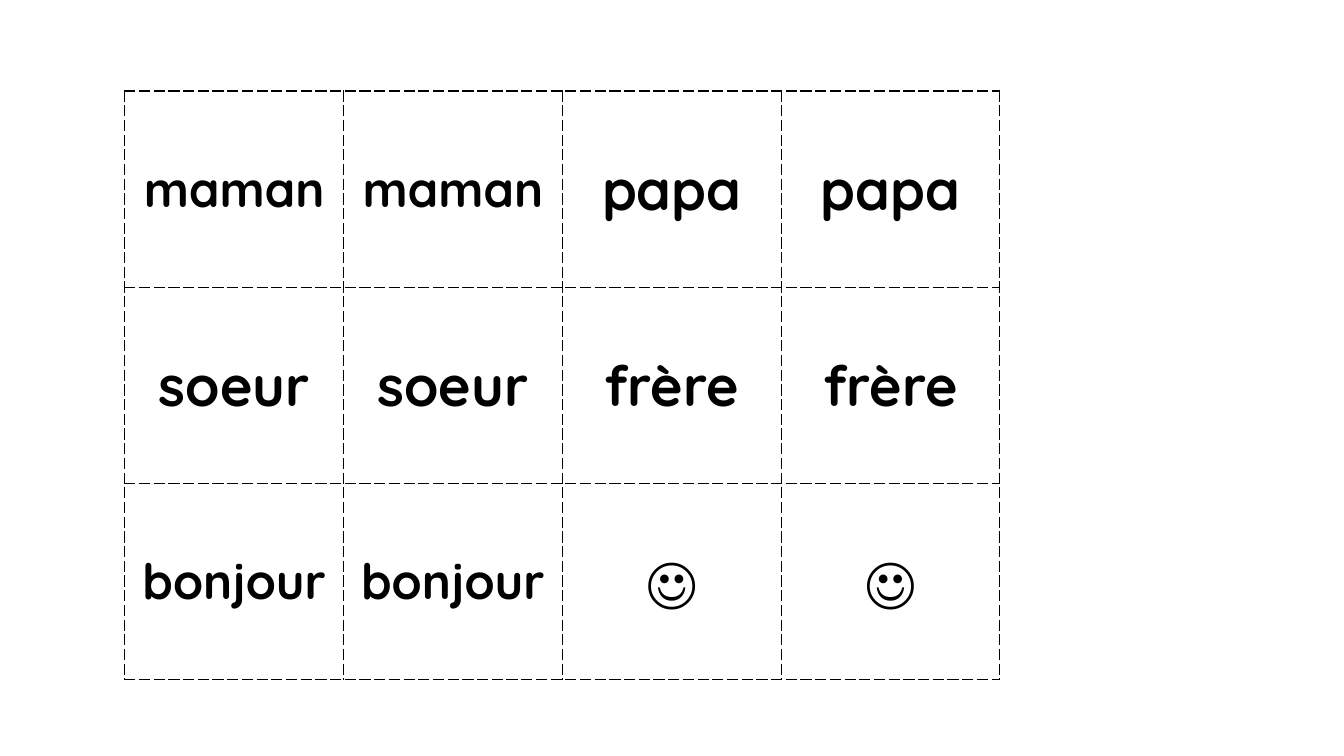
from dataclasses import dataclass

from lxml.etree import SubElement
from pptx import Presentation
from pptx.dml.color import RGBColor as RGB
from pptx.enum.text import MSO_ANCHOR as ANCHOR, PP_ALIGN as ALIGN
from pptx.oxml.ns import qn
from pptx.util import Pt


@dataclass(frozen=True)
class Theme:
    font: str = "Quicksand"
    ink: str = "000000"
    paper: str = "FFFFFF"
    long_word: float = 35
    short_word: float = 40
    border: float = 1
    dash: str = "sysDash"


class CardSheet:
    def __init__(self, prs, theme):
        self.theme = theme
        self.s = prs.slides.add_slide(prs.slide_layouts[6])

    def table(self, rows, left, top, col_width, row_height):
        n_cols = len(rows[0])
        frame = self.s.shapes.add_table(
            len(rows), n_cols, Pt(left), Pt(top),
            Pt(col_width * n_cols), Pt(row_height * len(rows)))
        tbl = frame.table
        tbl.first_row = tbl.horz_banding = False
        for col in tbl.columns:
            col.width = Pt(col_width)
        for row, entries in zip(tbl.rows, rows):
            row.height = Pt(row_height)
            for cell, (word, size) in zip(row.cells, entries):
                self.card(cell, word, size)

    def card(self, cell, word, size):
        # Borders come before the fill in the cell properties
        self.borders(cell)
        cell.fill.solid()
        cell.fill.fore_color.rgb = RGB.from_string(self.theme.paper)
        cell.vertical_anchor = ANCHOR.MIDDLE

        # Centred word
        p = cell.text_frame.paragraphs[0]
        p.alignment = ALIGN.CENTER
        r = p.add_run()
        r.text = word
        style = {"name": self.theme.font, "size": Pt(size), "bold": True}
        for name, value in style.items():
            setattr(r.font, name, value)
        r.font.color.rgb = RGB.from_string(self.theme.ink)

    def borders(self, cell):
        props = cell._tc.get_or_add_tcPr()
        for side in ("lnL", "lnR", "lnT", "lnB"):
            ln = SubElement(props, qn(f"a:{side}"), w=str(Pt(self.theme.border)))
            fill = SubElement(ln, qn("a:solidFill"))
            SubElement(fill, qn("a:srgbClr"), val=self.theme.ink)
            SubElement(ln, qn("a:prstDash"), val=self.theme.dash)


def main():
    prs = Presentation()
    prs.slide_width, prs.slide_height = Pt(960), Pt(540)
    theme = Theme()
    sheet = CardSheet(prs, theme)

    # Each word appears on two neighbouring cards
    long, short = theme.long_word, theme.short_word
    pairs = [
        [("maman", long), ("papa", short)],
        [("soeur", short), ("frère", short)],
        [("bonjour", long), ("☺", short)],
    ]
    rows = [[card for card in row for _ in range(2)] for row in pairs]
    sheet.table(rows, left=89.2, top=65, col_width=156.25, row_height=140.1)

    prs.save("out.pptx")


if __name__ == "__main__":
    main()
